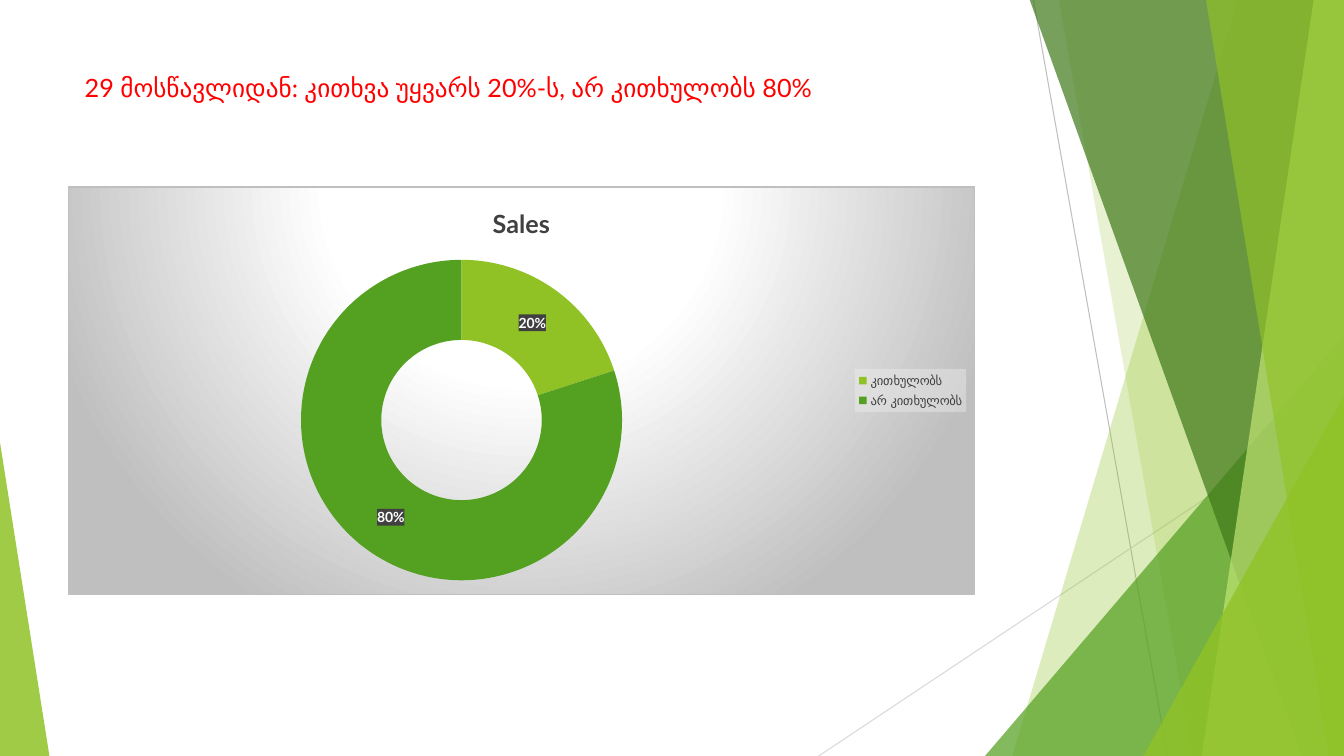
from dataclasses import dataclass

from lxml import etree
from pptx import Presentation
from pptx.chart.chart import Chart
from pptx.chart.data import CategoryChartData
from pptx.dml.color import RGBColor
from pptx.enum.chart import XL_CHART_TYPE, XL_LEGEND_POSITION
from pptx.enum.shapes import MSO_CONNECTOR, MSO_SHAPE
from pptx.enum.text import MSO_ANCHOR, MSO_AUTO_SIZE, PP_ALIGN
from pptx.oxml import parse_xml
from pptx.oxml.ns import nsdecls, qn
from pptx.slide import Slide
from pptx.util import Pt

DONUT = XL_CHART_TYPE.DOUGHNUT
RIGHT = XL_LEGEND_POSITION.RIGHT
STRAIGHT = MSO_CONNECTOR.STRAIGHT
TRIANGLE = MSO_SHAPE.ISOSCELES_TRIANGLE
TOP = MSO_ANCHOR.TOP
LEFT = PP_ALIGN.LEFT
NO_FIT = MSO_AUTO_SIZE.NONE

SCALE = 9144  # EMU in one px, 100 px to the inch
WIDE, HIGH = 1333, 750


@dataclass(frozen=True)
class Theme:
    font: str = "Lato"
    lime: str = "90C226"
    green: str = "54A021"
    dark: str = "3F7819"
    pale: str = "C0E474"
    red: str = "FF0000"
    white: str = "FFFFFF"
    ink: str = "404040"
    mist: str = "F2F2F2"
    gray: str = "BFBFBF"
    light: str = "D9D9D9"
    head: int = 18
    label: int = 10
    key: int = 9
    hair: float = 0.75


THEME = Theme()


@dataclass(frozen=True)
class Ray:
    start: tuple[int, int]
    end: tuple[int, int]
    color: str


@dataclass(frozen=True)
class Band:
    """Full-height facet reaching the right edge."""
    top: int
    foot: int
    color: str
    alpha: int


@dataclass(frozen=True)
class Wedge:
    """Right triangle standing on the bottom edge."""
    left: int
    top: int
    width: int
    apex: int
    color: str
    alpha: int


RAYS = [
    Ray((1025, 0), (1158, HIGH), THEME.gray),
    Ray((WIDE, 403), (812, HIGH), THEME.light),
]
FACETS = [
    Band(1228, 1004, THEME.lime, 30),
    Band(1050, 1183, THEME.lime, 20),
    Wedge(977, 333, 356, 1, THEME.green, 72),
    Band(1021, 1291, THEME.dark, 70),
    Band(1303, 1192, THEME.pale, 70),
    Band(1196, 1318, THEME.lime, 65),
    Wedge(1134, 393, 199, 1, THEME.lime, 80),
    Wedge(0, 439, 49, 0, THEME.lime, 85),
]
SHARES = {"კითხულობს": (20, THEME.lime), "არ კითხულობს": (80, THEME.green)}


def px(*sizes: int) -> list[int]:
    return [size * SCALE for size in sizes]


def style(font, size: int, color: str, bold: bool = False) -> None:
    font.name, font.size, font.bold = THEME.font, Pt(size), bold
    font.color.rgb = RGBColor.from_string(color)


def draw_ray(slide: Slide, ray: Ray) -> None:
    line = slide.shapes.add_connector(STRAIGHT, *px(*ray.start, *ray.end))
    line.line.color.rgb = RGBColor.from_string(ray.color)
    line.line.width = Pt(THEME.hair)
    etree.SubElement(line.element.spPr, qn("a:effectLst"))


def draw_facet(slide: Slide, facet: Band | Wedge) -> None:
    if isinstance(facet, Band):
        pen = slide.shapes.build_freeform(facet.top, -1, scale=SCALE)
        pen.add_line_segments([(WIDE, -1), (WIDE, HIGH), (facet.foot, HIGH)])
        shape = pen.convert_to_shape()
    else:
        box = px(facet.left, facet.top, facet.width, HIGH - facet.top)
        shape = slide.shapes.add_shape(TRIANGLE, *box)
        shape.adjustments[0] = facet.apex
    shape.shadow.inherit = False
    shape.line.fill.background()
    shape.fill.solid()
    shape.fill.fore_color.rgb = RGBColor.from_string(facet.color)
    tint = next(shape.element.iter(qn("a:srgbClr")))
    etree.SubElement(tint, qn("a:alpha"), val=str(facet.alpha * 1000))


def put_title(slide: Slide, text: str) -> None:
    title = slide.shapes.title
    title.left, title.top, title.width, title.height = px(74, 67, 940, 144)
    frame = title.text_frame
    frame.word_wrap, frame.auto_size = True, NO_FIT
    frame.vertical_anchor = TOP
    line = frame.paragraphs[0]
    line.alignment = LEFT
    run = line.add_run()
    run.text = text
    style(run.font, THEME.head, THEME.red)


def solid(color: str, alpha: int) -> str:
    return (f'<a:solidFill><a:srgbClr val="{color}"><a:alpha val="{alpha}000"/>'
            '</a:srgbClr></a:solidFill>')


def glow() -> str:
    stops = [(0, THEME.white), (39, THEME.white), (100, THEME.gray)]
    marks = "".join(f'<a:gs pos="{pos}000"><a:srgbClr val="{color}"/></a:gs>'
                    for pos, color in stops)
    return (f'<a:gradFill><a:gsLst>{marks}</a:gsLst><a:path path="circle">'
            '<a:fillToRect l="50000" t="-80000" r="50000" b="180000"/>'
            f'</a:path></a:gradFill><a:ln w="{Pt(THEME.hair)}">'
            f'{solid(THEME.gray, 100)}</a:ln>')


def back(part, paint: str) -> None:
    """Paint the ground of a chart part, just ahead of its text style."""
    props = parse_xml(f'<c:spPr {nsdecls("c", "a")}>{paint}</c:spPr>')
    part.find(qn("c:txPr")).addprevious(props)


def put_chart(slide: Slide) -> Chart:
    data = CategoryChartData()
    data.categories = list(SHARES)
    data.add_series("Sales", [value for value, _ in SHARES.values()])
    chart = slide.shapes.add_chart(DONUT, *px(67, 185, 900, 405), data).chart
    style(chart.font, THEME.label, THEME.ink)
    back(chart.element, glow())

    # Chart title
    chart.has_title = True
    run = chart.chart_title.text_frame.paragraphs[0].add_run()
    run.text = "Sales"
    style(run.font, THEME.head, THEME.ink, True)
    chart.chart_title.include_in_layout = False

    # Legend
    chart.has_legend = True
    chart.legend.position = RIGHT
    chart.legend.include_in_layout = False
    style(chart.legend.font, THEME.key, THEME.ink)
    back(next(chart.element.iter(qn("c:legend"))), solid(THEME.mist, 39))

    # Slices and their labels
    plot = chart.plots[0]
    plot.vary_by_categories = True
    ring = plot.series[0]
    for spot, (_, color) in enumerate(SHARES.values()):
        fill = ring.points[spot].format.fill
        fill.solid()
        fill.fore_color.rgb = RGBColor.from_string(color)
    tags = ring.data_labels
    tags.show_percentage, tags.show_value = True, False
    tags.number_format, tags.number_format_is_linked = "0%", False
    style(tags.font, THEME.label, THEME.white, True)
    back(ring.data_labels.font and ring.points and
         next(chart.element.iter(qn("c:ser"))).find(qn("c:dLbls")),
         solid(THEME.ink, 90))
    return chart


def main() -> None:
    deck = Presentation()
    deck.slide_width, deck.slide_height = px(WIDE, HIGH)
    slide = deck.slides.add_slide(deck.slide_layouts[5])
    # Backdrop
    for ray in RAYS:
        draw_ray(slide, ray)
    for facet in FACETS:
        draw_facet(slide, facet)
    # Content
    put_title(slide, "29 მოსწავლიდან: კითხვა უყვარს 20%-ს, არ კითხულობს 80%")
    put_chart(slide)
    deck.save("out.pptx")


if __name__ == "__main__":
    main()
